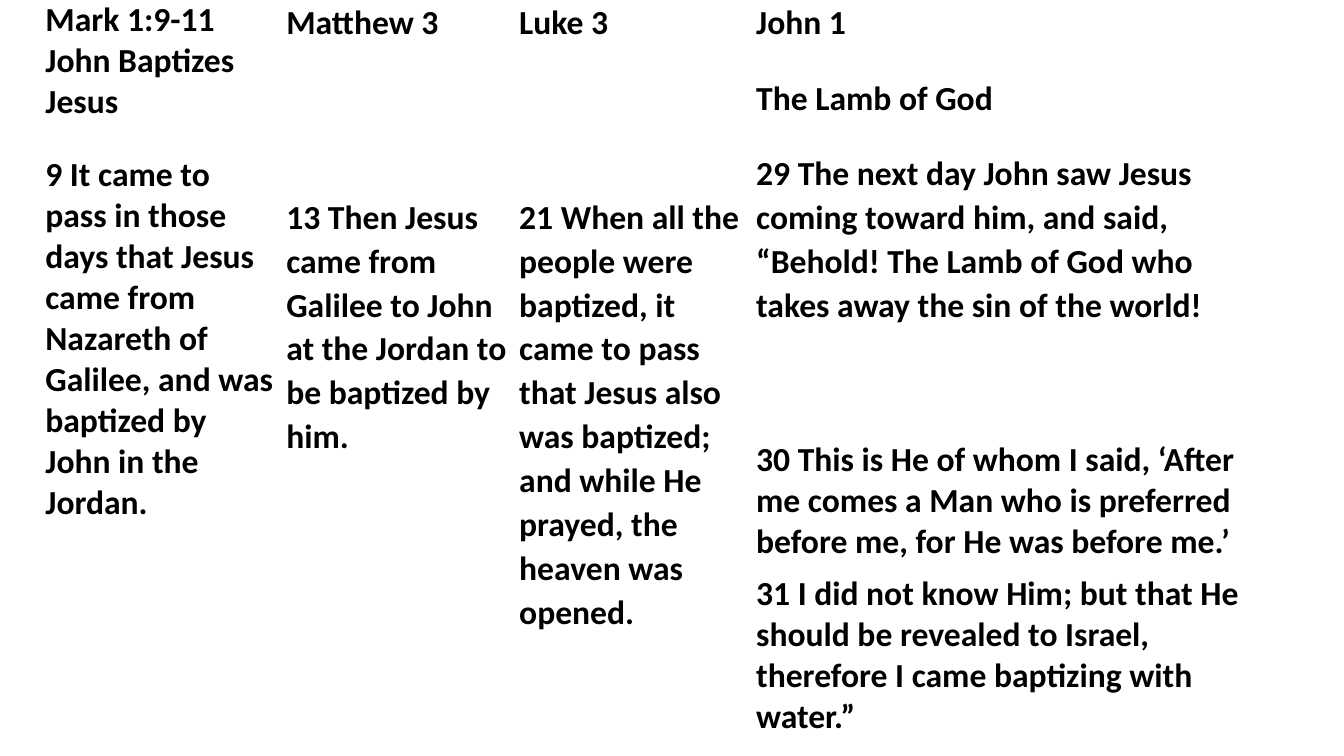
from lxml import etree
from pptx import Presentation
from pptx.dml.color import RGBColor
from pptx.oxml.ns import qn
from pptx.util import Inches, Pt

COLORS = {"paper": "FFFFFF", "ink": "000000"}
FONT = "Calibri"
FONT_SIZE = 24
COLUMN_WIDTHS = (2.39, 2.31, 2.35, 5.22)
ROW_HEIGHTS = (6.81, 0.69)

# Points before and after a paragraph, and its line spacing
BEFORE, AFTER = 15, 7.5
LOOSE, SINGLE = 1.07, 1.0
VERSE_DROP = 100.2  # aligns the verses of Matthew and Luke
SPEECH_DROP = 73.6  # sets verse 30 apart from verse 29

# One list per gospel: (text, space before, line spacing)
GOSPELS = [
    [
        ("Mark 1:9-11 John Baptizes Jesus", BEFORE, SINGLE),
        ("9 It came to pass in those days that Jesus came from Nazareth of "
         "Galilee, and was baptized by John in the Jordan.", BEFORE, SINGLE),
    ],
    [
        ("Matthew 3", BEFORE, LOOSE),
        ("13 Then Jesus came from Galilee to John at the Jordan to be "
         "baptized by him.", VERSE_DROP, LOOSE),
    ],
    [
        ("Luke 3", BEFORE, LOOSE),
        ("21 When all the people were baptized, it came to pass that Jesus "
         "also was baptized; and while He prayed, the heaven was opened.",
         VERSE_DROP, LOOSE),
    ],
    [
        ("John 1", BEFORE, LOOSE),
        ("The Lamb of God", BEFORE, LOOSE),
        ("29 The next day John saw Jesus coming toward him, and said, "
         "“Behold! The Lamb of God who takes away the sin of the world!",
         BEFORE, LOOSE),
        ("30 This is He of whom I said, ‘After me comes a Man who is "
         "preferred before me, for He was before me.’", SPEECH_DROP, SINGLE),
        ("31 I did not know Him; but that He should be revealed to Israel, "
         "therefore I came baptizing with water.”", 0, SINGLE),
    ],
]


def set_borders(cell, widths):
    """Draw the left, right, top and bottom borders, widths in points."""
    properties = cell._tc.get_or_add_tcPr()
    for index, (tag, width) in enumerate(zip(("lnL", "lnR", "lnT", "lnB"), widths)):
        line = etree.Element(qn(f"a:{tag}"), w=str(Pt(width)))
        fill = etree.SubElement(line, qn("a:solidFill"))
        etree.SubElement(fill, qn("a:srgbClr"), val=COLORS["paper"])
        properties.insert(index, line)


def style_cell(cell, bottom_width):
    cell.fill.solid()
    cell.fill.fore_color.rgb = RGBColor.from_string(COLORS["paper"])
    cell.margin_left = cell.margin_right = Inches(0.06)
    cell.margin_top = cell.margin_bottom = 0
    set_borders(cell, (1, 1, 1, bottom_width))


def write_passage(cell, passage):
    cell.text_frame.text = "\n".join(text for text, _, _ in passage)
    for paragraph, (_, before, spacing) in zip(cell.text_frame.paragraphs, passage):
        paragraph.space_before = Pt(before)
        paragraph.space_after = Pt(AFTER)
        paragraph.line_spacing = spacing
        font = paragraph.runs[0].font
        font.name = FONT
        font.size = Pt(FONT_SIZE)
        font.bold = True
        font.color.rgb = RGBColor.from_string(COLORS["ink"])


def add_gospel_table(slide):
    table = slide.shapes.add_table(
        len(ROW_HEIGHTS), len(COLUMN_WIDTHS), Inches(0.39), 0,
        Inches(sum(COLUMN_WIDTHS)), Inches(sum(ROW_HEIGHTS))).table
    table.first_row = table.horz_banding = False
    for column, width in zip(table.columns, COLUMN_WIDTHS):
        column.width = Inches(width)
    for row, height, bottom_width in zip(table.rows, ROW_HEIGHTS, (3, 1)):
        row.height = Inches(height)
        for cell in row.cells:
            style_cell(cell, bottom_width)
    for cell, passage in zip(table.rows[0].cells, GOSPELS):
        write_passage(cell, passage)


def main():
    presentation = Presentation()
    presentation.slide_width = Inches(13.33)
    presentation.slide_height = Inches(7.5)
    slide = presentation.slides.add_slide(presentation.slide_layouts[6])

    # Parallel accounts, one column per gospel
    add_gospel_table(slide)
    presentation.save("out.pptx")


if __name__ == "__main__":
    main()
